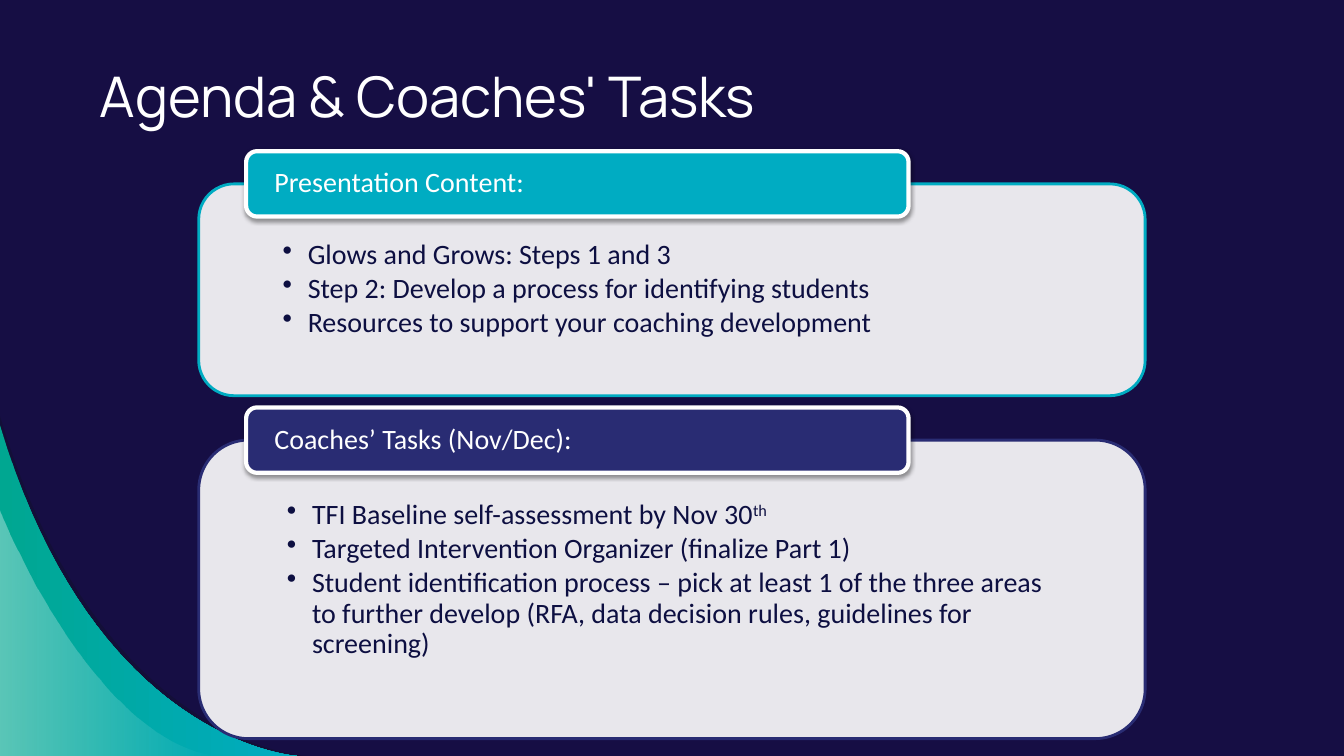
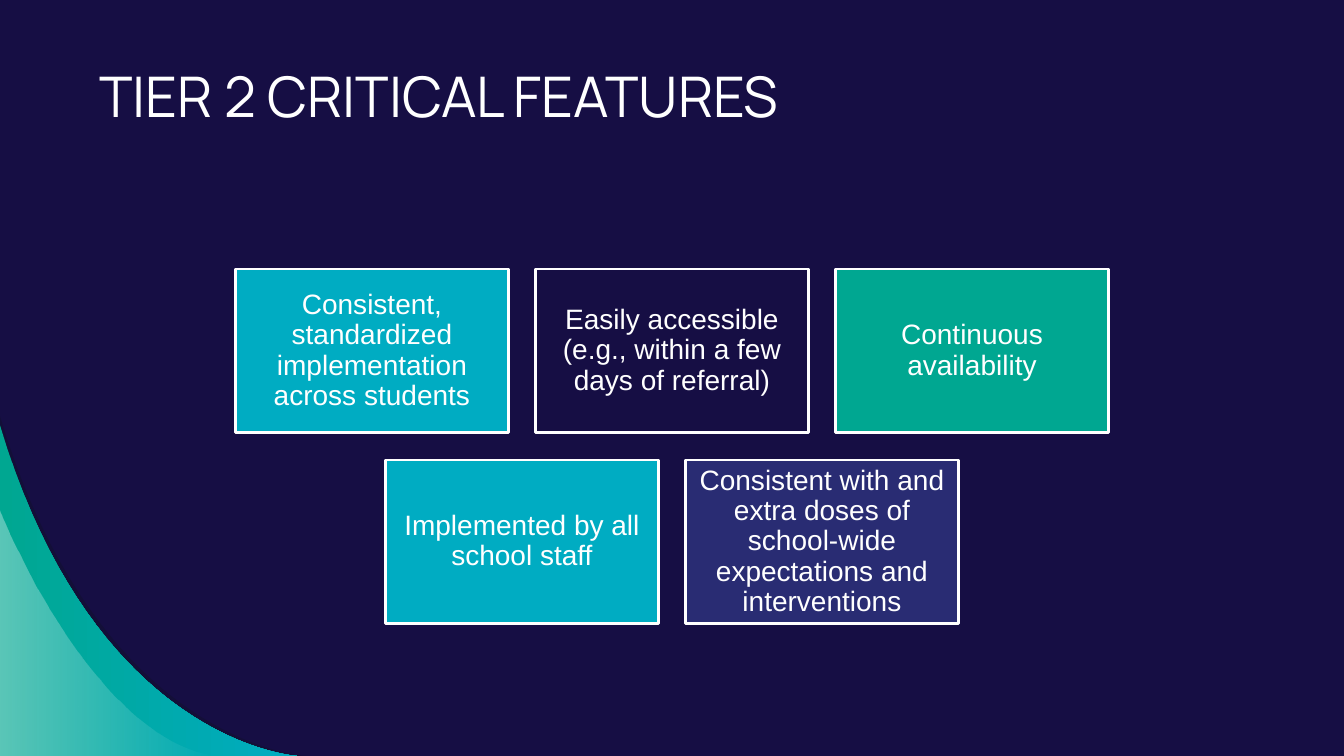
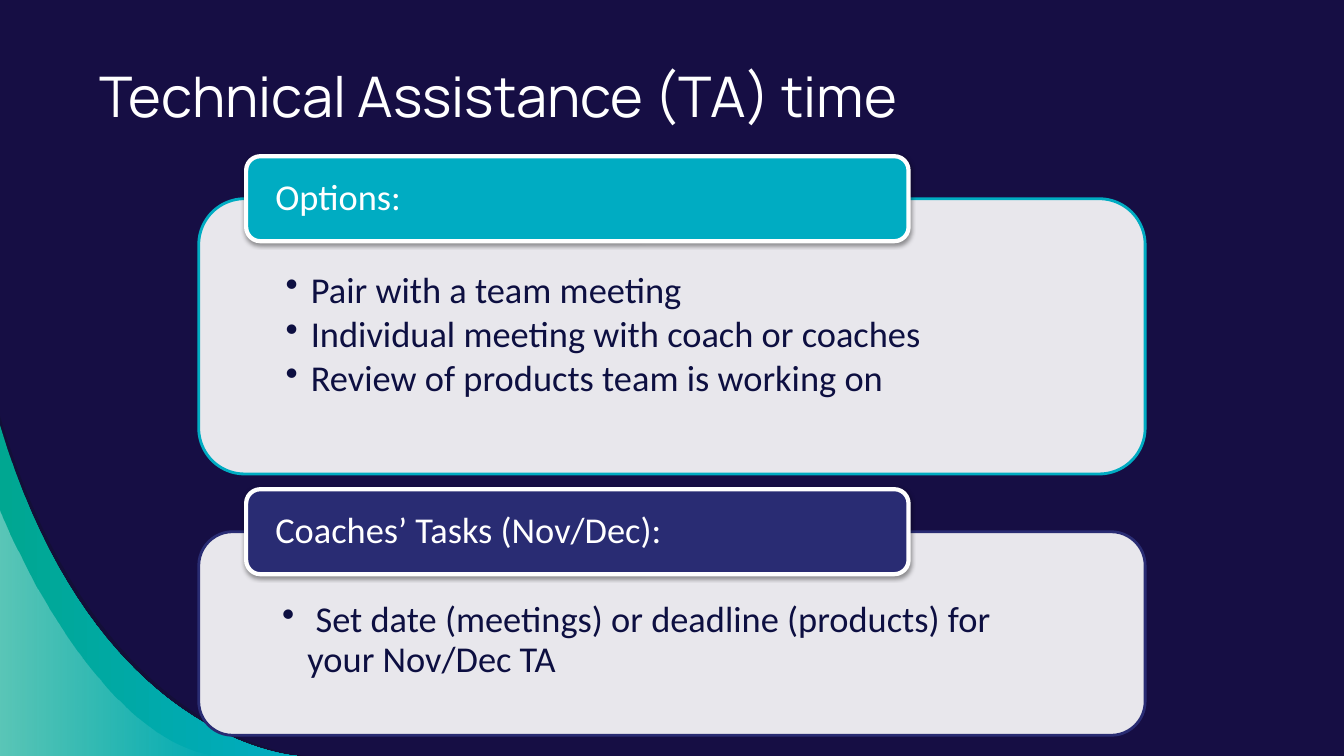
"""Build three coaching slides: two panel stacks and one grid of tiles."""
from collections import namedtuple
from dataclasses import dataclass

from lxml.etree import SubElement as Sub
from pptx import Presentation
from pptx.dml.color import RGBColor as Rgb
from pptx.enum.shapes import MSO_SHAPE as Kind
from pptx.enum.text import MSO_ANCHOR as Anchor, PP_ALIGN as Align
from pptx.oxml.ns import qn
from pptx.util import Pt

Box = namedtuple("Box", "x y w h")
Sup = namedtuple("Sup", "text")


@dataclass(frozen=True)
class Theme:
    back: str = "160E44"
    ink: str = "0D0F41"
    white: str = "FFFFFF"
    teal: str = "00ACC2"
    green: str = "00A791"
    navy: str = "292C73"
    shade: str = "12102F"
    black: str = "000000"
    head: str = "Manrope"
    body: str = "Calibri"
    tile: str = "Arial"
    large: int = 40
    mid: int = 26
    small: int = 20


T = Theme()
PAGE = Box(0, 0, 960, 540)


def color(code):
    return Rgb.from_string(code)


def place(box):
    return [Pt(v) for v in box]


def fade(shape, *levels):
    """Set the opacity, in percent, of the fill colours in order."""
    for tint, level in zip(list(shape._element.spPr.iter(qn("a:srgbClr"))), levels):
        Sub(tint, qn("a:alpha"), val=str(level * 1000))


def drop(shape):
    """Give a shape a soft shadow straight below."""
    list_ = shape._element.spPr.find(qn("a:effectLst"))
    cast = Sub(list_, qn("a:outerShdw"), blurRad=str(Pt(3.1)), dist=str(Pt(1.6)),
               dir="5400000", algn="ctr", rotWithShape="0")
    tint = Sub(cast, qn("a:srgbClr"), val=T.black)
    Sub(tint, qn("a:alpha"), val="38000")


def block(slide, box, kind, fill, line, width):
    shape = slide.shapes.add_shape(kind, *place(box))
    shape.shadow.inherit = False
    shape.fill.solid()
    shape.fill.fore_color.rgb = color(fill)
    shape.line.color.rgb = color(line)
    shape.line.width = Pt(width)
    return shape


def frame(shape, inset, anchor):
    """Set wrap, anchor and the left, top, right and bottom insets."""
    body = shape.text_frame
    body.word_wrap = True
    body.vertical_anchor = anchor
    sides = [Pt(v) for v in inset]
    body.margin_left, body.margin_top, body.margin_right, body.margin_bottom = sides
    return body


def write(para, parts, font, size, tint, align=Align.LEFT):
    """Add the parts of a line as runs; a Sup part is raised."""
    para.alignment = align
    for part in parts:
        run = para.add_run()
        run.text = part.text if isinstance(part, Sup) else part
        run.font.name = font
        run.font.size = Pt(size)
        run.font.color.rgb = color(tint)
        if isinstance(part, Sup):
            run._r.get_or_add_rPr().set("baseline", "30000")


def bullet(para, size):
    para.line_spacing = 0.9
    para.space_after = Pt(0.135 * size)
    props = para._p.get_or_add_pPr()
    props.set("marL", str(Pt(18)))
    props.set("indent", str(Pt(-18)))
    Sub(props, qn("a:buChar"), char="•")


def wing(slide, box, near, far):
    """Draw a corner shape whose top edge is a curve across the box."""
    knots = [(0, 0), near, far, (1, 1)]

    def spot(t):
        u = 1 - t
        mix = (u ** 3, 3 * u * u * t, 3 * u * t * t, t ** 3)
        x, y = (sum(m * k[i] for m, k in zip(mix, knots)) for i in (0, 1))
        return Pt(box.x + x * box.w), Pt(box.y + y * box.h)

    pen = slide.shapes.build_freeform(*spot(0))
    pen.add_line_segments([spot(i / 40) for i in range(1, 41)]
                          + [(Pt(box.x), Pt(box.y + box.h))], close=True)
    shape = pen.convert_to_shape()
    shape.shadow.inherit = False
    shape.line.fill.background()
    return shape


def blend(shape, left, right):
    shape.fill.gradient()
    shape.fill.gradient_angle = 0
    for stop, tint in zip(shape.fill.gradient_stops, (left, right)):
        stop.color.rgb = color(tint)


def swoosh(slide, box):
    """Draw the layered curve in the lower left corner."""
    def part(w, h):
        return Box(box.x, box.y + box.h - h, w, h)

    edge = (0.32, 0.967), (1, 1)
    rim = wing(slide, part(box.w, box.h), *edge)
    rim.fill.solid()
    rim.fill.fore_color.rgb = color(T.shade)
    fade(rim, 54)
    blend(wing(slide, part(212.4, 236.2), *edge), T.green, T.teal)
    glow = wing(slide, part(155.5, 175.7), (0, 0), (0.42, 0.94))
    blend(glow, T.white, T.white)
    fade(glow, 36, 0)


def title(slide, box, text):
    shape = slide.shapes.add_textbox(*place(box))
    body = frame(shape, [7.2] * 4, Anchor.TOP)
    write(body.paragraphs[0], [text], T.head, T.large, T.white)


def panel(slide, box, tab, size, tint, head, lines):
    """Draw a bulleted panel with a heading tab across its top edge."""
    sheet = Box(box.x, box.y + tab / 2, box.w, box.h - tab / 2)
    shape = block(slide, sheet, Kind.ROUNDED_RECTANGLE, T.white, tint, 2)
    fade(shape, 90)
    body = frame(shape, (52.5, 1.64 * size, 52.5, 0.56 * size), Anchor.TOP)
    for i, parts in enumerate(lines):
        para = body.add_paragraph() if i else body.paragraphs[0]
        bullet(para, size)
        write(para, parts, T.body, size, T.ink)
    strip = Box(box.x + 0.05 * box.w, box.y, 0.7 * box.w, tab)
    shape = block(slide, strip, Kind.ROUNDED_RECTANGLE, tint, T.white, 3)
    drop(shape)
    body = frame(shape, (17.9, 0, 17.9, 0), Anchor.MIDDLE)
    body.paragraphs[0].line_spacing = 0.9
    write(body.paragraphs[0], [head], T.body, size, T.white)


def stack(slide, box, size, items):
    """Stack panels down the box, sharing its height by weight."""
    tab, gap = 2.335 * size, 0.42 * size
    room = box.h - gap * (len(items) - 1) - tab / 2 * len(items)
    total = sum(item[0] for item in items)
    y = box.y
    for part, tint, head, lines in items:
        high = tab / 2 + room * part / total
        panel(slide, Box(box.x, y, box.w, high), tab, size, tint, head, lines)
        y += high + gap


def grid(slide, box, rows):
    """Lay out centred rows of tiles, three tiles to the full width."""
    w = box.w / 3.2
    h, gap = 0.6 * w, 0.1 * w
    for r, row in enumerate(rows):
        left = box.x + (box.w - len(row) * (w + gap) + gap) / 2
        for c, (tint, text) in enumerate(row):
            cell = Box(left + c * (w + gap), box.y + r * (h + gap), w, h)
            shape = block(slide, cell, Kind.RECTANGLE, tint, T.white, 2)
            body = frame(shape, [6] * 4, Anchor.MIDDLE)
            body.paragraphs[0].line_spacing = 0.9
            write(body.paragraphs[0], [text], T.tile, T.small, T.white, Align.CENTER)


def start(deck, text):
    """Add a slide with the shared curve and title."""
    slide = deck.slides.add_slide(deck.slide_layouts[6])
    swoosh(slide, Box(0, PAGE.h - 242.7, 218.2, 242.7))
    title(slide, Box(64.1, 36.7, 738.7, 66.2), text)
    return slide


def main():
    deck = Presentation()
    deck.slide_width, deck.slide_height = Pt(PAGE.w), Pt(PAGE.h)
    back = deck.slide_master.background.fill
    back.solid()
    back.fore_color.rgb = color(T.back)

    slide = start(deck, "Agenda & Coaches' Tasks")
    stack(slide, Box(142, 108, 676, 419.6), T.small, [
        (151.2, T.teal, "Presentation Content:", [
            ["Glows and Grows: Steps 1 and 3"],
            ["Step 2: Develop a process for identifying students"],
            ["Resources to support your coaching development"]]),
        (213.1, T.navy, "Coaches’ Tasks (Nov/Dec):", [
            ["TFI Baseline self-assessment by Nov 30", Sup("th")],
            ["Targeted Intervention Organizer (finalize Part 1)"],
            ["Student identification process – pick at least 1 of the three areas "
             "to further develop (RFA, data decision rules, guidelines for screening)"]]),
    ])

    slide = start(deck, "TIER 2 CRITICAL FEATURES")
    grid(slide, Box(168.3, 192.2, 623.4, 253.2), [
        [(T.teal, "Consistent, standardized implementation across students"),
         (T.back, "Easily accessible (e.g., within a few days of referral)"),
         (T.green, "Continuous availability")],
        [(T.teal, "Implemented by all school staff"),
         (T.navy, "Consistent with and extra doses of school-wide "
                  "expectations and interventions")],
    ])

    slide = start(deck, "Technical Assistance (TA) time")
    stack(slide, Box(142, 111.6, 676, 413.6), T.mid, [
        (196.6, T.teal, "Options:", [
            ["Pair with a team meeting"],
            ["Individual meeting with coach or coaches"],
            ["Review of products team is working on"]]),
        (145.4, T.navy, "Coaches’ Tasks (Nov/Dec):", [
            [" Set date (meetings) or deadline (products) for your Nov/Dec TA"]]),
    ])
    deck.save("out.pptx")


if __name__ == "__main__":
    main()
